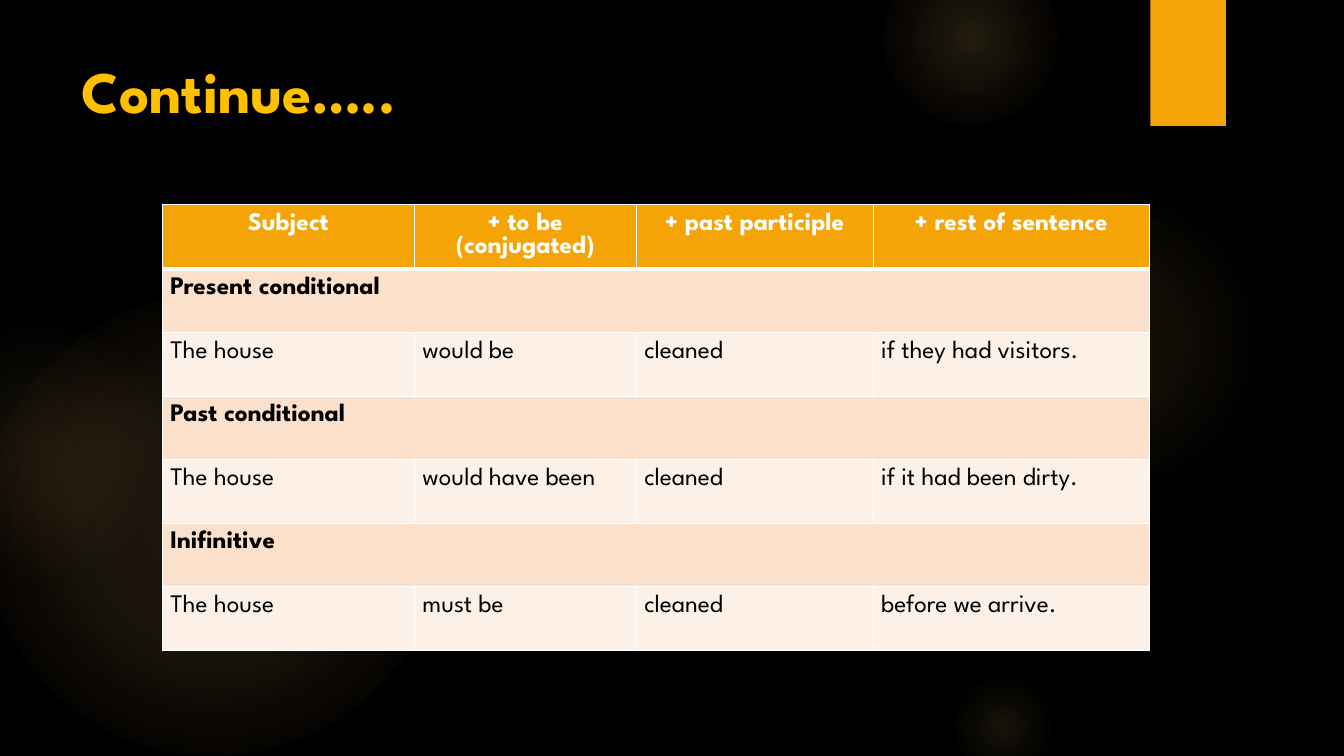
"""Build the passive voice slide with its table of conditional and infinitive forms."""
from lxml.etree import SubElement
from pptx import Presentation
from pptx.dml.color import RGBColor
from pptx.enum.shapes import MSO_SHAPE
from pptx.enum.text import MSO_ANCHOR, PP_ALIGN
from pptx.oxml import parse_xml
from pptx.oxml.ns import nsdecls, qn
from pptx.util import Inches, Pt

THEME = {
    "font": "League Spartan", "title_size": 42, "table_size": 18,
    "background": "000000", "accent": "F5A408", "title": "FFC000",
    "glow": "FAC96A", "ember": "F59B74", "section": "FBE0CC",
    "example": "FDF0E7", "white": "FFFFFF", "ink": "000000",
}


def color(name):
    return RGBColor.from_string(THEME[name])


def write(paragraph, text, size, ink, bold):
    run = paragraph.add_run()
    run.text = text
    run.font.name = THEME["font"]
    run.font.size = Pt(THEME[size])
    run.font.bold = bold
    run.font.color.rgb = color(ink)


deck = Presentation()
deck.slide_width, deck.slide_height = Inches(13.33), Inches(7.5)
slide = deck.slides.add_slide(deck.slide_layouts[6])
slide.background.fill.solid()
slide.background.fill.fore_color.rgb = color("background")

glows = [
    (-0.17, 2.92, 4.58, [(0, "glow", 11), (36, "glow", 10), (75, "glow", 0)]),
    (-0.92, 3.17, 2.58, [(0, "glow", 8), (36, "glow", 5), (71, "ember", 0)]),
    (9.41, 1.83, 3.08, [(0, "glow", 7), (36, "glow", 6), (69, "glow", 0)]),
    (8.75, -0.5, 1.75, [(0, "glow", 14), (36, "glow", 7), (73, "glow", 0)]),
    (9.41, 6.67, 1.08, [(0, "glow", 10), (31, "glow", 5), (66, "glow", 0)]),
]
for left, top, diameter, stops in glows:
    glow = slide.shapes.add_shape(MSO_SHAPE.OVAL, Inches(left), Inches(top),
                                  Inches(diameter), Inches(diameter))
    glow.shadow.inherit = False
    glow.line.fill.background()
    stop_xml = "".join(
        f'<a:gs pos="{position * 1000}"><a:srgbClr val="{THEME[tint]}">'
        f'<a:alpha val="{opacity * 1000}"/></a:srgbClr></a:gs>'
        for position, tint, opacity in stops)
    gradient = parse_xml(
        f'<a:gradFill {nsdecls("a")} rotWithShape="1"><a:gsLst>{stop_xml}</a:gsLst>'
        '<a:path path="circle"><a:fillToRect l="50000" t="50000" r="50000" b="50000"/>'
        '</a:path></a:gradFill>')
    glow._element.spPr.find(qn("a:prstGeom")).addnext(gradient)

ribbon = slide.shapes.add_shape(MSO_SHAPE.RECTANGLE, Inches(11.41), 0,
                                Inches(0.75), Inches(1.25))
ribbon.shadow.inherit = False
ribbon.fill.solid()
ribbon.fill.fore_color.rgb = color("accent")
ribbon.line.fill.background()

heading = slide.shapes.add_textbox(Inches(0.71), Inches(0.5),
                                   Inches(10.29), Inches(1.53)).text_frame
heading.word_wrap = True
heading.vertical_anchor = MSO_ANCHOR.TOP
heading.margin_top = Inches(0.04)
write(heading.paragraphs[0], "Continue…..", "title_size", "title", True)

forms = [
    ["Subject", "+ to be (conjugated)", "+ past participle", "+ rest of sentence"],
    ["Present conditional"],
    ["The house", "would be", "cleaned", "if they had visitors."],
    ["Past conditional"],
    ["The house", "would have been", "cleaned", "if it had been dirty."],
    ["Inifinitive"],
    ["The house", "must be", "cleaned", "before we arrive."],
]
column_widths = [2.5, 2.2, 2.35, 2.74]
row_height = 0.63
grid = slide.shapes.add_table(
    len(forms), len(column_widths), Inches(1.61), Inches(2.03),
    Inches(sum(column_widths)), Inches(row_height * len(forms))).table
for column, width in zip(grid.columns, column_widths):
    column.width = Inches(width)

for row_index, entries in enumerate(forms):
    is_header = row_index == 0
    is_section = len(entries) == 1
    fill = "accent" if is_header else "section" if is_section else "example"
    for cell in grid.rows[row_index].cells:
        cell.margin_left = cell.margin_right = cell.margin_top = Inches(0.08)
        cell.margin_bottom = Inches(-0.04 if is_header else 0.08)
        for side in ("lnL", "lnR", "lnT", "lnB"):
            thick = (is_header and side == "lnB") or (row_index == 1 and side == "lnT")
            border = SubElement(cell._tc.get_or_add_tcPr(), qn(f"a:{side}"),
                                w=str(Pt(3 if thick else 1)))
            paint = SubElement(border, qn("a:solidFill"))
            SubElement(paint, qn("a:srgbClr"), val=THEME["white"])
        cell.fill.solid()
        cell.fill.fore_color.rgb = color(fill)
    if is_section:
        grid.cell(row_index, 0).merge(grid.cell(row_index, len(column_widths) - 1))
    for column_index, entry in enumerate(entries):
        paragraph = grid.cell(row_index, column_index).text_frame.paragraphs[0]
        paragraph.alignment = PP_ALIGN.CENTER if is_header else PP_ALIGN.LEFT
        write(paragraph, entry, "table_size", "white" if is_header else "ink",
              is_header or is_section)

deck.save("out.pptx")
